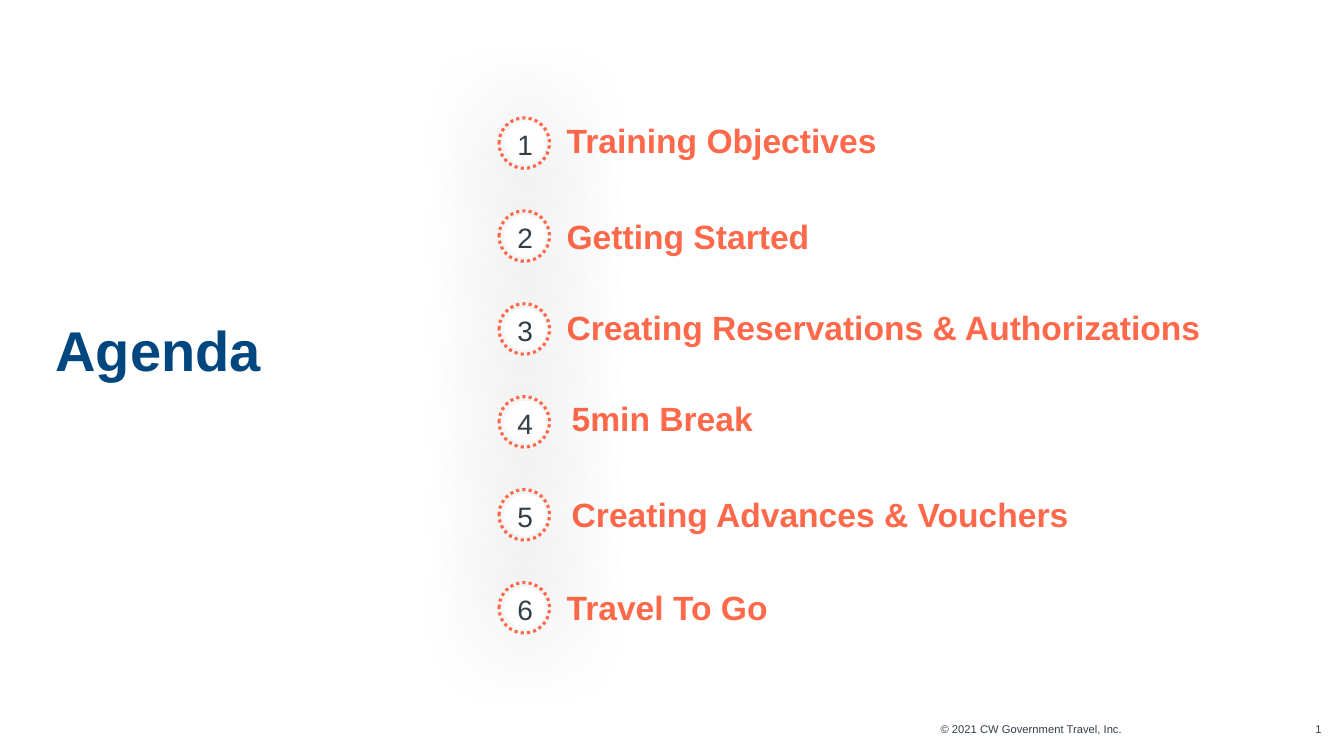
"""Build the agenda slide with six numbered topics."""
import pptx
import pptx.util
import pptx.dml.color
import pptx.enum.dml
import pptx.enum.shapes
import pptx.enum.text
import pptx.oxml
import pptx.oxml.ns

TOPICS = [
    ("Training Objectives", 5.62, 1.31, 0.27, 0.65),
    ("Getting Started", 5.62, 2.14, 0.4, 1),
    ("Creating Reservations & Authorizations", 5.62, 3.17, 0.26, 0.65),
    ("5min Break", 5.67, 4.07, 0.26, 0.65),
    ("Creating Advances & Vouchers", 5.67, 5.03, 0.26, 0.65),
    ("Travel To Go", 5.62, 5.82, 0.4, 1),
]
TITLE = "Agenda"
FOOTER = "© 2021 CW Government Travel, Inc."
CORAL, NAVY, SLATE, WHITE = "FF694B", "00467F", "333F48", "FFFFFF"
TOP, STEP = 1.17, 0.922
NS = pptx.oxml.ns.nsdecls("a")
GLOW = (f'<a:effectLst {NS}><a:outerShdw blurRad="889000" dist="0" dir="0" '
        f'algn="ctr" rotWithShape="0"><a:srgbClr val="{SLATE}">'
        '<a:alpha val="40000"/></a:srgbClr></a:outerShdw></a:effectLst>')
FIELD = (f'<a:fld {NS} id="{{B6F15528-21DE-4FAA-801E-634DDDAF4B2B}}" '
         'type="slidenum"><a:rPr lang="en-US"/><a:t>1</a:t></a:fld>')

Inches = pptx.util.Inches
Align = pptx.enum.text.PP_ALIGN
Anchor = pptx.enum.text.MSO_ANCHOR


def color(code):
    return pptx.dml.color.RGBColor.from_string(code)


def style(frame, size, code, bold=False, align=Align.LEFT, anchor=Anchor.MIDDLE):
    frame.margin_left = frame.margin_right = 0
    frame.margin_top = frame.margin_bottom = 0
    frame.auto_size = pptx.enum.text.MSO_AUTO_SIZE.NONE
    frame.vertical_anchor = anchor
    frame.word_wrap = True
    para = frame.paragraphs[0]
    para.alignment = align
    para.font.name = "Arial"
    para.font.size = pptx.util.Pt(size)
    para.font.bold = bold
    para.font.color.rgb = color(code)
    return para


def label(shapes, text, spot, *look, **more):
    box = shapes.add_textbox(*map(Inches, spot))
    box.text_frame.text = text
    return style(box.text_frame, *look, **more)


def disc(shapes, left, top, size):
    shape = shapes.add_shape(pptx.enum.shapes.MSO_SHAPE.OVAL,
                             *map(Inches, (left, top, size, size)))
    shape.shadow.inherit = False
    return shape


def badge(slide, num, top):
    shapes = slide.shapes.add_group_shape().shapes
    core = disc(shapes, 5, top + 0.04, 0.42)
    core.fill.solid()
    core.fill.fore_color.rgb = color(WHITE)
    core.line.fill.background()
    props = core._element.spPr
    props.remove(props.find(pptx.oxml.ns.qn("a:effectLst")))
    props.append(pptx.oxml.parse_xml(GLOW))
    ring = disc(shapes, 4.95, top, 0.5)
    ring.fill.background()
    ring.line.color.rgb = color(CORAL)
    ring.line.width = pptx.util.Pt(2.25)
    ring.line.dash_style = pptx.enum.dml.MSO_LINE.ROUND_DOT
    label(shapes, str(num), (5.03, top + 0.04, 0.36, 0.44), 20, SLATE,
          align=Align.CENTER)


def main():
    deck = pptx.Presentation()
    deck.slide_width, deck.slide_height = Inches(13.33), Inches(7.5)
    slide = deck.slides.add_slide(deck.slide_layouts[5])
    title = slide.shapes.title
    title.left, title.top = Inches(0.55), Inches(0.71)
    title.width, title.height = Inches(3.5), Inches(5.5)
    title.text_frame.text = TITLE
    style(title.text_frame, 40, NAVY, True)

    small = {"align": Align.RIGHT, "anchor": Anchor.TOP}
    label(slide.shapes, FOOTER, (8.38, 7.17, 2.75, 0.14), 8, SLATE, **small)
    page = label(slide.shapes, "", (12.88, 7.17, 0.23, 0.14), 8, SLATE, **small)
    page._p.append(pptx.oxml.parse_xml(FIELD))

    for text, left, top, high, gap in TOPICS:
        para = label(slide.shapes, text, (left, top, 6.46, high), 24, CORAL, True)
        para.line_spacing = gap
    for row in range(len(TOPICS)):
        badge(slide, row + 1, TOP + row * STEP)
    deck.save("out.pptx")


if __name__ == "__main__":
    main()
